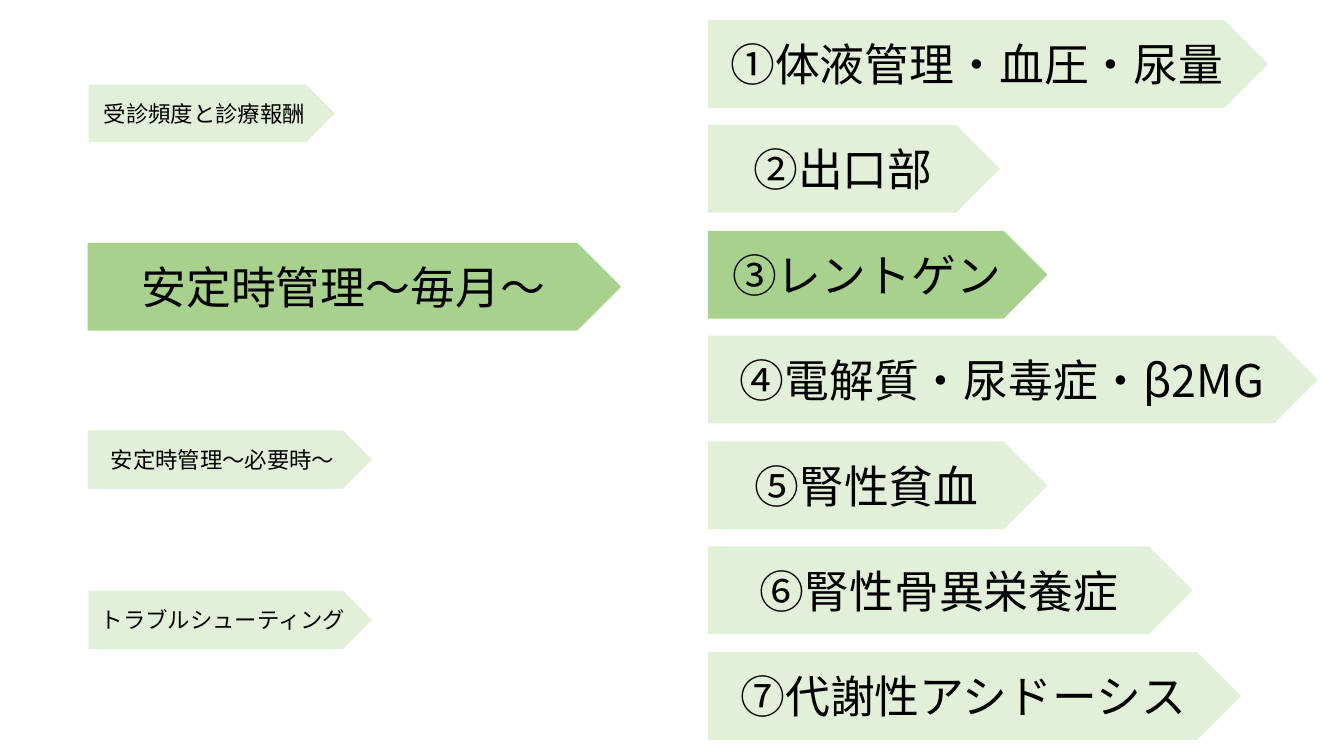
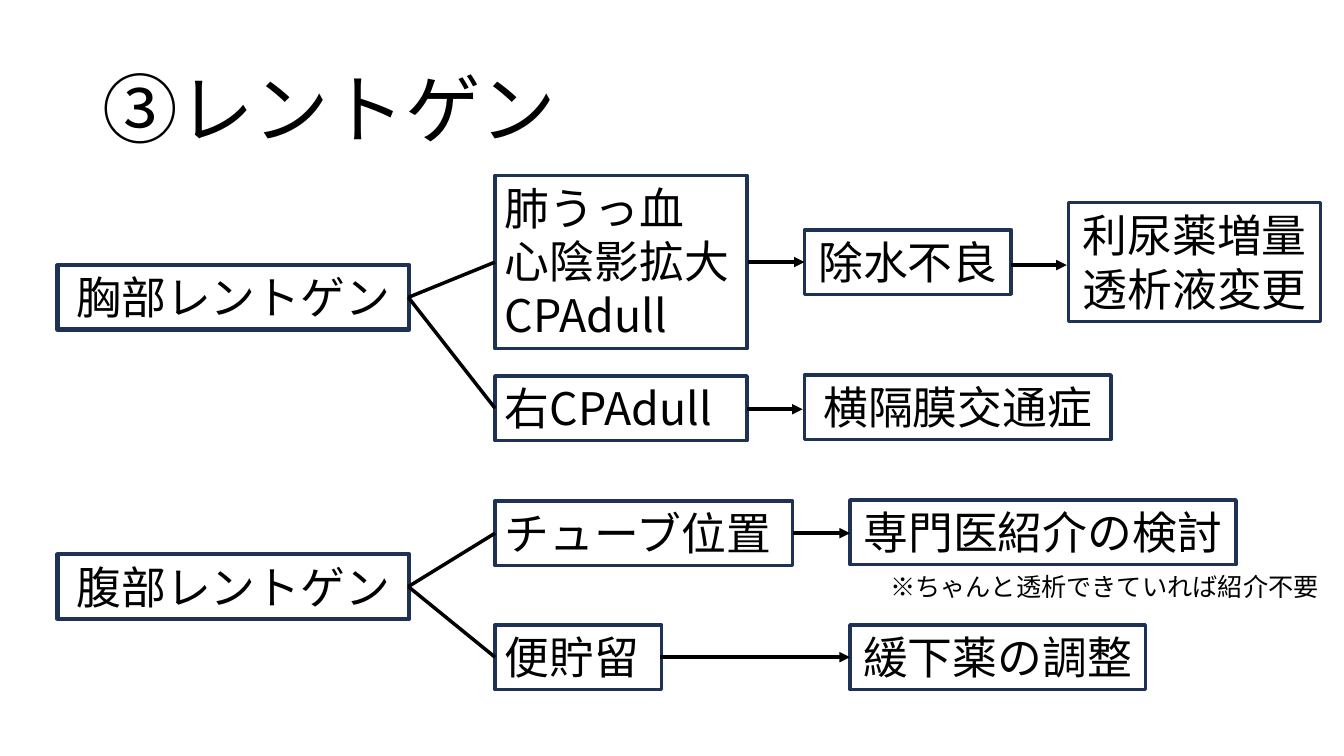
from lxml.etree import SubElement
from pptx import Presentation
from pptx.dml.color import RGBColor
from pptx.enum.shapes import MSO_CONNECTOR as Connector, MSO_SHAPE as Shape
from pptx.enum.text import MSO_ANCHOR as Anchor, PP_ALIGN as Align
from pptx.oxml.ns import qn
from pptx.util import Pt

PX = 9144
FONT = "Noto Sans CJK JP"
BLACK = RGBColor(0x00, 0x00, 0x00)
NAVY = RGBColor(0x1E, 0x32, 0x56)
PALE_GREEN = RGBColor(0xE2, 0xF0, 0xD9)
GREEN = RGBColor(0xA9, 0xD1, 0x8E)
CURRENT_TOPIC = "③レントゲン"

CHAPTERS = [
    ("受診頻度と診療報酬", (88, 84, 244, 57), 16, PALE_GREEN),
    ("安定時管理〜毎月〜", (87, 241, 529, 87), 32, GREEN),
    ("安定時管理〜必要時〜", (87, 427, 282, 58), 16, PALE_GREEN),
    ("トラブルシューティング", (88, 586, 281, 58), 16, PALE_GREEN),
]
TOPICS = [
    ("①体液管理・血圧・尿量", 556),
    ("②出口部", 290),
    (CURRENT_TOPIC, 337),
    ("④電解質・尿毒症・β2MG", 605),
    ("⑤腎性貧血", 337),
    ("⑥腎性骨異栄養症", 481),
    ("⑦代謝性アシドーシス", 529),
]
EXAMS = [
    ("胸部レントゲン", (57, 263, 349, 64)),
    ("腹部レントゲン", (57, 550, 349, 64)),
]
FINDINGS = [
    ("肺うっ血\n心陰影拡大\nCPAdull", (491, 174, 250, 172)),
    ("右CPAdull", (491, 373, 250, 64)),
    ("チューブ位置", (491, 497, 295, 64)),
    ("便貯留", (491, 620, 165, 64)),
]
RESPONSES = [
    ("除水不良", (798, 228, 205, 64)),
    ("利尿薬増量\n透析液変更", (1060, 201, 250, 118)),
    ("横隔膜交通症", (798, 372, 304, 64)),
    ("専門医紹介の検討", (843, 496, 383, 64)),
    ("緩下薬の調整", (843, 620, 293, 64)),
]
BRANCHES = {295: (260, 405), 582: (529, 652)}
ARROWS = [
    (742, 798, 260),
    (1003, 1058, 263),
    (741, 796, 406),
    (787, 843, 529),
    (655, 843, 652),
]


def scaled(lengths):
    """Turn px lengths into EMU."""
    return [length * PX for length in lengths]


def write(frame, text, size, align=Align.LEFT, anchor=Anchor.TOP, spacing=None):
    """Fill a text frame, one paragraph for each line of text."""
    frame.word_wrap = True
    frame.vertical_anchor = anchor
    frame.text = text
    for para in frame.paragraphs:
        para.alignment = align
        para.line_spacing = spacing
        para.font.size = Pt(size)
        para.font.color.rgb = BLACK
        para.font.name = FONT
        defaults = para._p.pPr.find(qn("a:defRPr"))
        SubElement(defaults, qn("a:ea")).set("typeface", FONT)


def add_label(page, text, place, size, **style):
    """Add plain text without fill or outline."""
    box = page.shapes.add_textbox(*scaled(place))
    write(box.text_frame, text, size, **style)


def add_plate(page, text, place, size, fill):
    """Add a filled arrow plate with centred text."""
    plate = page.shapes.add_shape(Shape.PENTAGON, *scaled(place))
    plate.shadow.inherit = False
    plate.fill.solid()
    plate.fill.fore_color.rgb = fill
    plate.line.fill.background()
    write(plate.text_frame, text, size, Align.CENTER, Anchor.MIDDLE)


def add_box(page, text, place, align=Align.CENTER, width=2.5):
    """Add an outlined box of the flow chart."""
    box = page.shapes.add_shape(Shape.RECTANGLE, *scaled(place))
    box.shadow.inherit = False
    box.fill.background()
    box.line.color.rgb = NAVY
    box.line.width = Pt(width)
    write(box.text_frame, text, 32, align)


def add_link(page, ends, arrow=False):
    """Add a straight black line, with an arrowhead if wanted."""
    link = page.shapes.add_connector(Connector.STRAIGHT, *scaled(ends))
    link.line.color.rgb = BLACK
    link.line.width = Pt(2.5)
    if arrow:
        SubElement(link.line._get_or_add_ln(), qn("a:tailEnd")).set("type", "triangle")
    SubElement(link._element.spPr, qn("a:effectLst"))


def build_contents(page):
    """Show the chapters on the left and the topics on the right."""
    for chapter in CHAPTERS:
        add_plate(page, *chapter)
    for index, (text, width) in enumerate(TOPICS):
        top = 20 + index * 627 // 6
        fill = GREEN if text == CURRENT_TOPIC else PALE_GREEN
        add_plate(page, text, (702, top, width, 87), 32, fill)


def build_flow(page):
    """Show the flow from each exam to its findings and responses."""
    add_label(page, CURRENT_TOPIC, (92, 40, 1150, 145), 54, anchor=Anchor.MIDDLE, spacing=0.9)
    for text, place in EXAMS:
        add_box(page, text, place, width=3)
    for text, place in FINDINGS:
        add_box(page, text, place, Align.LEFT)
    for text, place in RESPONSES:
        add_box(page, text, place)
    for start, stops in BRANCHES.items():
        for stop in stops:
            add_link(page, (405, start, 491, stop))
    for left, right, middle in ARROWS:
        add_link(page, (left, middle, right, middle), arrow=True)
    add_label(page, "※ちゃんと透析できていれば紹介不要", (873, 562, 449, 40), 18)


def main():
    """Build and save the deck."""
    deck = Presentation()
    deck.slide_width, deck.slide_height = scaled((1333, 750))
    blank = deck.slide_layouts[6]
    for build in (build_contents, build_flow):
        build(deck.slides.add_slide(blank))
    deck.save("out.pptx")


if __name__ == "__main__":
    main()
